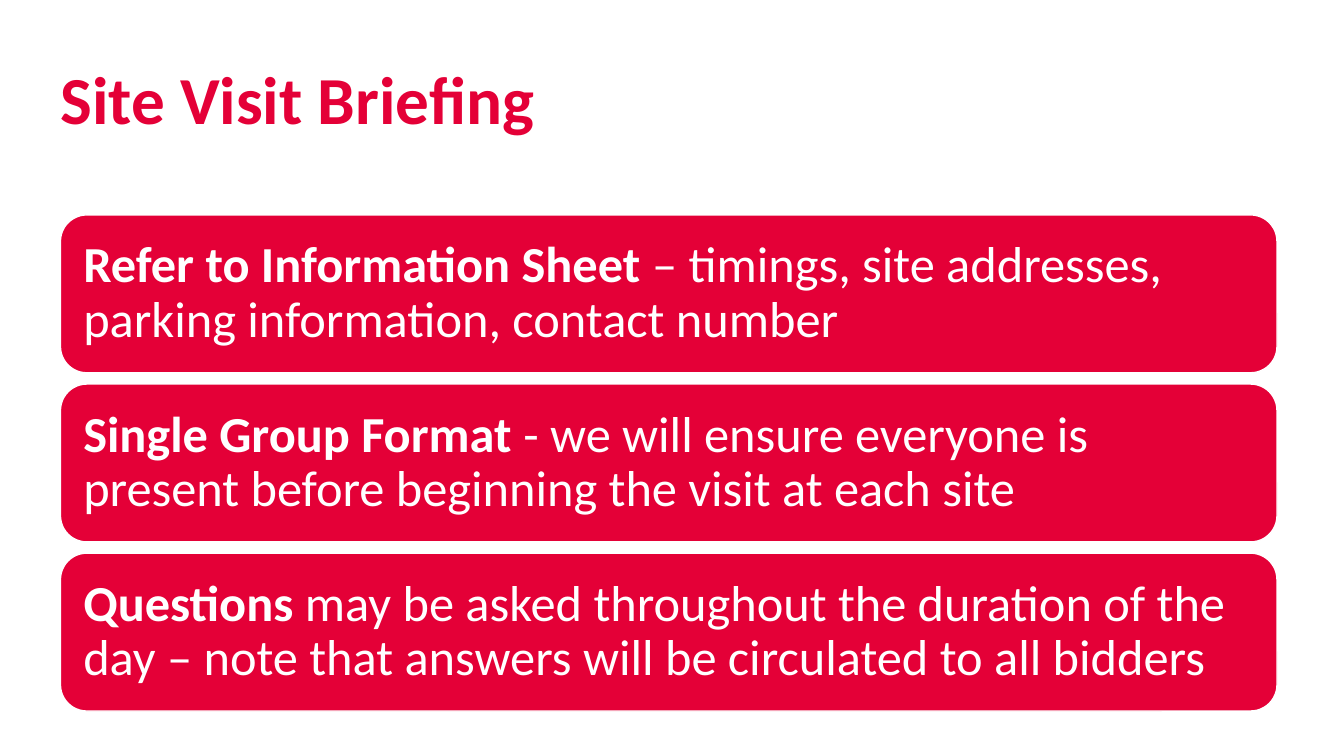
"""Build the Site Visit Briefing slide with three rounded message panels."""
from pptx import Presentation
from pptx.dml.color import RGBColor
from pptx.enum.shapes import MSO_SHAPE
from pptx.enum.text import MSO_ANCHOR, MSO_AUTO_SIZE, PP_ALIGN
from pptx.util import Pt

RED = RGBColor(0xE4, 0x00, 0x37)
WHITE = RGBColor(0xFF, 0xFF, 0xFF)
FONT = "Calibri"
LEFT = 43.2
PANEL_TOP = 153.5
PANEL_WIDTH = 869
PANEL_HEIGHT = 112.8
PANEL_PITCH = 120.8
PANEL_INSET = 10.8

BRIEFING_POINTS = [
    ("Refer to Information Sheet ",
     "– timings, site addresses, parking information, contact number"),
    ("Single Group Format ",
     "- we will ensure everyone is present before beginning the visit at each site"),
    ("Questions",
     " may be asked throughout the duration of the day – note that answers "
     "will be circulated to all bidders"),
]


def add_run(paragraph, text, size, color, bold):
    run = paragraph.add_run()
    run.text = text
    run.font.name = FONT
    run.font.size = Pt(size)
    run.font.color.rgb = color
    run.font.bold = bold


def set_frame(text_frame, inset, anchor):
    text_frame.margin_left = text_frame.margin_right = Pt(inset)
    text_frame.margin_top = text_frame.margin_bottom = Pt(inset)
    text_frame.vertical_anchor = anchor
    text_frame.word_wrap = True
    text_frame.auto_size = MSO_AUTO_SIZE.NONE
    paragraph = text_frame.paragraphs[0]
    paragraph.alignment = PP_ALIGN.LEFT
    return paragraph


presentation = Presentation()
presentation.slide_width = Pt(960)
presentation.slide_height = Pt(540)
slide = presentation.slides.add_slide(presentation.slide_layouts[5])

title = slide.shapes.title
title.left, title.top = Pt(LEFT), Pt(41)
title.width, title.height = Pt(583.2), Pt(83.5)
title_paragraph = set_frame(title.text_frame, 0, MSO_ANCHOR.TOP)
add_run(title_paragraph, "Site Visit Briefing", 48, RED, True)

for index, (heading, detail) in enumerate(BRIEFING_POINTS):
    panel = slide.shapes.add_shape(
        MSO_SHAPE.ROUNDED_RECTANGLE,
        Pt(LEFT), Pt(PANEL_TOP + index * PANEL_PITCH),
        Pt(PANEL_WIDTH), Pt(PANEL_HEIGHT))
    panel.name = f"Briefing point {index + 1}"
    panel.shadow.inherit = False
    panel.fill.solid()
    panel.fill.fore_color.rgb = RED
    panel.line.color.rgb = WHITE
    panel.line.width = Pt(1)
    paragraph = set_frame(panel.text_frame, PANEL_INSET, MSO_ANCHOR.MIDDLE)
    paragraph.line_spacing = 0.9
    add_run(paragraph, heading, 36, WHITE, True)
    add_run(paragraph, detail, 36, WHITE, False)

presentation.save("out.pptx")
